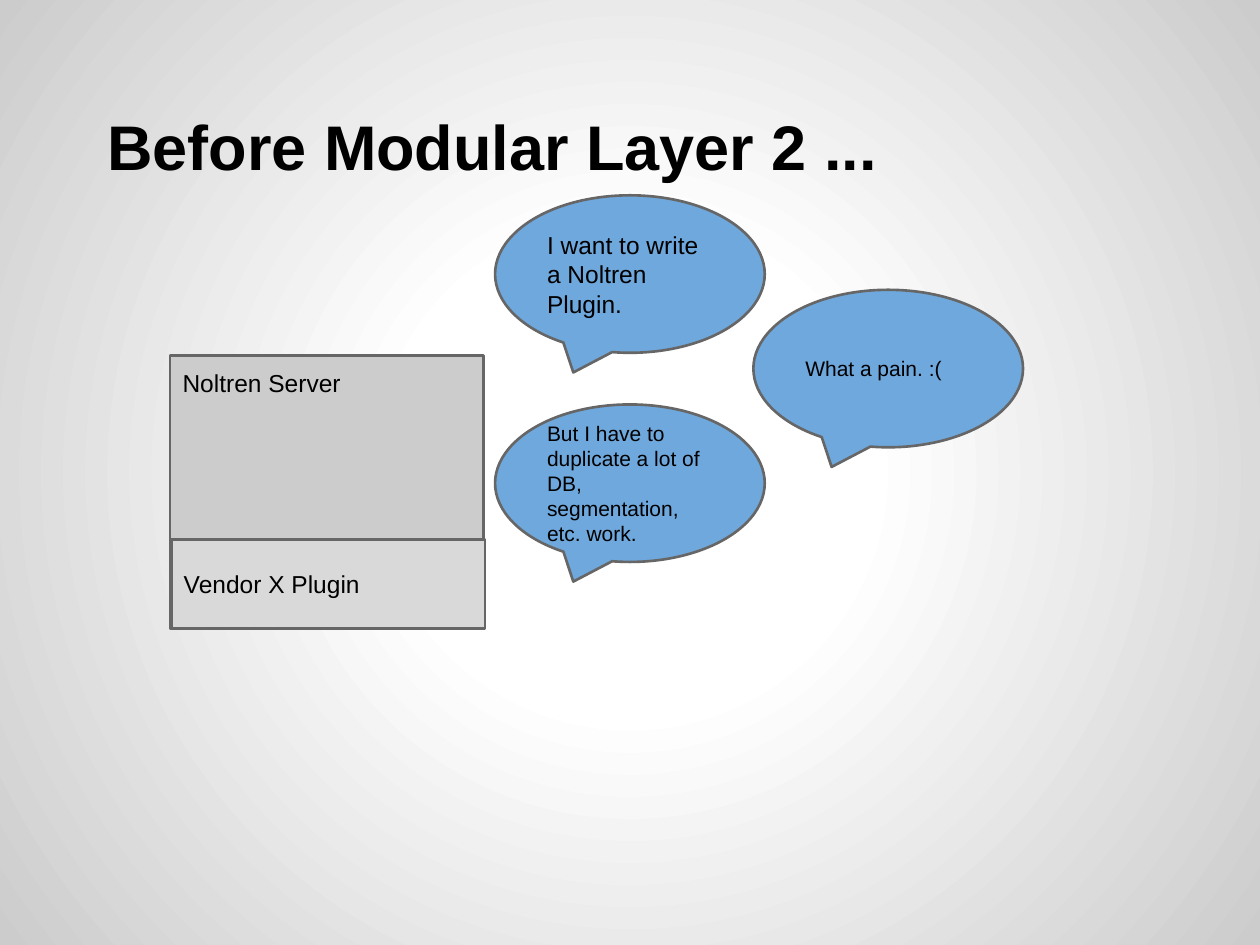
from lxml import etree
from pptx import Presentation
from pptx.dml.color import RGBColor
from pptx.enum import shapes, text
from pptx.oxml import ns
from pptx.util import Inches, Pt

BLACK = RGBColor(0x00, 0x00, 0x00)
OUTLINE = RGBColor(0x66, 0x66, 0x66)
SERVER_GRAY = RGBColor(0xCC, 0xCC, 0xCC)
PLUGIN_GRAY = RGBColor(0xD9, 0xD9, 0xD9)
BUBBLE_BLUE = RGBColor(0x6F, 0xA8, 0xDC)
WHITE = RGBColor(0xFF, 0xFF, 0xFF)

BUBBLE_SIZE = (2.14, 1.25)
BUBBLES = [
    (3.93, 1.55, "I want to write a Noltren Plugin.", 14),
    (3.93, 3.21, "But I have to duplicate a lot of DB, segmentation, etc. work.", 12),
    (5.98, 2.3, "What a pain. :(", 12),
]


def set_background(slide):
    fill = slide.background.fill
    fill.gradient()
    gradient = slide.background._cSld.find(".//" + ns.qn("a:gradFill"))
    for child in list(gradient):
        gradient.remove(child)
    stops = etree.SubElement(gradient, ns.qn("a:gsLst"))
    for position, color in ((0, WHITE), (30, WHITE), (100, SERVER_GRAY)):
        stop = etree.SubElement(stops, ns.qn("a:gs"), pos=str(position * 1000))
        etree.SubElement(stop, ns.qn("a:srgbClr"), val=str(color))
    shading = etree.SubElement(gradient, ns.qn("a:path"), path="circle")
    etree.SubElement(
        shading, ns.qn("a:fillToRect"), dict.fromkeys("ltrb", "50000")
    )


def write_text(shape, content, size, anchor, bold=False):
    frame = shape.text_frame
    frame.word_wrap = True
    frame.auto_size = text.MSO_AUTO_SIZE.NONE
    frame.vertical_anchor = anchor
    frame.margin_left = frame.margin_right = Inches(0.1)
    frame.margin_top = frame.margin_bottom = Inches(0.1)
    frame.text = content
    paragraph = frame.paragraphs[0]
    paragraph.alignment = text.PP_ALIGN.LEFT
    font = paragraph.font
    font.name = "Arial"
    font.size = Pt(size)
    font.bold = bold
    font.color.rgb = BLACK
    return paragraph


def set_title(slide, content):
    title = slide.shapes.title
    title.left, title.top = Inches(0.5), Inches(0.3)
    title.width, title.height = Inches(9), Inches(1.25)
    paragraph = write_text(title, content, 36, text.MSO_ANCHOR.BOTTOM, bold=True)
    properties = paragraph._p.get_or_add_pPr()
    properties.set("marL", "0")
    properties.set("indent", str(Inches(0.25)))


def add_labeled_shape(slide, kind, bounds, color, content, size=14,
                      anchor=text.MSO_ANCHOR.MIDDLE):
    shape = slide.shapes.add_shape(kind, *map(Inches, bounds))
    shape.shadow.inherit = False
    shape.fill.solid()
    shape.fill.fore_color.rgb = color
    shape.line.color.rgb = OUTLINE
    shape.line.width = Pt(1.5)
    write_text(shape, content, size, anchor)
    return shape


def add_bubble(slide, left, top, content, size):
    bubble = add_labeled_shape(
        slide, shapes.MSO_SHAPE.OVAL_CALLOUT, (left, top, *BUBBLE_SIZE),
        BUBBLE_BLUE, content, size,
    )
    bubble.adjustments[0] = -0.21
    bubble.adjustments[1] = 0.625


def main():
    presentation = Presentation()
    presentation.slide_width = Inches(10)
    presentation.slide_height = Inches(7.5)
    slide = presentation.slides.add_slide(presentation.slide_layouts[5])
    set_background(slide)
    set_title(slide, "Before Modular Layer 2 ...")
    rectangle = shapes.MSO_SHAPE.RECTANGLE
    add_labeled_shape(slide, rectangle, (1.35, 2.82, 2.49, 2.17), SERVER_GRAY,
                      "Noltren Server", anchor=text.MSO_ANCHOR.TOP)
    add_labeled_shape(slide, rectangle, (1.36, 4.28, 2.49, 0.71), PLUGIN_GRAY,
                      "Vendor X Plugin")
    for bubble in BUBBLES:
        add_bubble(slide, *bubble)
    presentation.save("out.pptx")


if __name__ == "__main__":
    main()
